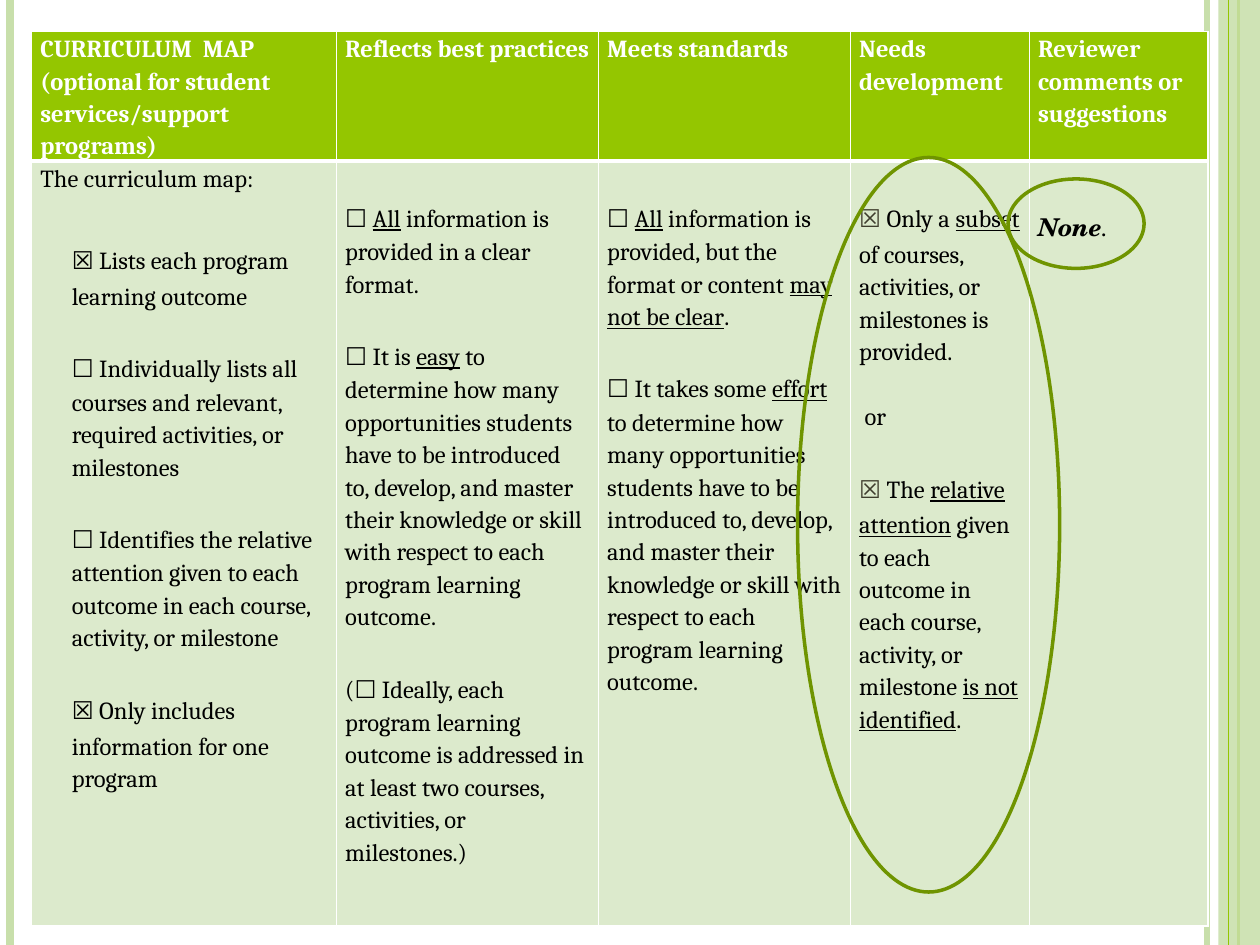
"""Builds a curriculum map review slide with a rubric table and two highlights."""
from dataclasses import dataclass

from lxml import etree
from pptx import Presentation
from pptx import util as u
from pptx.dml.color import RGBColor
from pptx.enum import shapes
from pptx.oxml import ns

COLORS = {
    "white": "FFFFFF", "black": "000000", "green": "94C600", "olive": "6F9400",
    "pale": "DCEACC", "rail": "C8DFAB", "check": "3E3D2D",
}
BODY, OPEN_BOX, CHECKED_BOX = "Cambria", "Noto Sans CJK JP", "TeX Gyre Schola"
LINE_GAP = 18.5

COLUMNS = [2.42, 2.08, 2, 1.42, 1.42]
ROWS = [1.01, 6.07]
HEADERS = [
    "CURRICULUM  MAP (optional for student services/support programs)",
    "Reflects best practices",
    "Meets standards",
    "Needs development",
    "Reviewer comments or suggestions",
]
OPPORTUNITIES = (
    " to determine how many opportunities students have to be introduced to, "
    "develop, and master their knowledge or skill with respect to each program "
    "learning outcome."
)
CHECKLIST = [
    "The curriculum map:",
    "☒ Lists each program learning outcome",
    "☐ Individually lists all courses and relevant, required activities, or milestones",
    "☐ Identifies the relative attention given to each outcome in each course, "
    "activity, or milestone",
    "☒ Only includes information for one program",
]
RATINGS = [
    [
        "☐ _All_ information is provided in a clear format.",
        "☐ It is _easy_" + OPPORTUNITIES,
        "(☐ Ideally, each program learning outcome is addressed in at least two "
        "courses, activities, or milestones.)",
    ],
    [
        "☐ _All_ information is provided, but the format or content _may not be clear_.",
        "☐ It takes some _effort_" + OPPORTUNITIES,
    ],
    [
        "☒ Only a _subset_ of courses, activities, or milestones is provided.",
        " or",
        "☒ The _relative attention_ given to each outcome in each course, activity, "
        "or milestone _is not identified_.",
    ],
]
RAILS = [(9.58, "rail", 3), (0.08, "rail", 4.5), (9.83, "green", 1.5)]
HIGHLIGHTS = [(6.33, 1.25, 2.08, 5.83), (8, 1.42, 1.08, 0.71)]


def rgb(name):
    return RGBColor.from_string(COLORS[name])


@dataclass
class Painter:
    """Holds the slide and the text style."""
    slide: object
    size: float = 14
    spacing: float = 1.15

    def rail(self, left, color, width):
        line = self.slide.shapes.add_connector(
            shapes.MSO_CONNECTOR.STRAIGHT, u.Inches(left), 0, u.Inches(left), u.Inches(7.5))
        line.line.color.rgb = rgb(color)
        line.line.width = u.Pt(width)
        etree.SubElement(line._element.spPr, ns.qn("a:effectLst"))

    def band(self, left, width):
        band = self.slide.shapes.add_shape(
            shapes.MSO_SHAPE.RECTANGLE, u.Inches(left), 0, u.Inches(width), u.Inches(7.5))
        band.shadow.inherit = False
        band.fill.solid()
        band.fill.fore_color.rgb = rgb("rail")
        tint = band._element.spPr.find(".//" + ns.qn("a:srgbClr"))
        etree.SubElement(tint, ns.qn("a:alpha"), val="87000")
        band.line.fill.background()

    def highlight(self, *frame):
        ring = self.slide.shapes.add_shape(
            shapes.MSO_SHAPE.OVAL, *(u.Inches(length) for length in frame))
        ring.shadow.inherit = False
        ring.fill.background()
        ring.line.color.rgb = rgb("olive")
        ring.line.width = u.Pt(2)

    def table(self, left, top):
        table = self.slide.shapes.add_table(
            len(ROWS), len(COLUMNS), u.Inches(left), u.Inches(top),
            u.Inches(sum(COLUMNS)), u.Inches(sum(ROWS))).table
        for column, width in zip(table.columns, COLUMNS):
            column.width = u.Inches(width)
        for row, height in zip(table.rows, ROWS):
            row.height = u.Inches(height)
        return table

    def cell(self, cell, fill, top=0, edges=(1, 1, 1, 1)):
        cell.margin_left = cell.margin_right = u.Inches(0.07)
        cell.margin_top, cell.margin_bottom = u.Inches(top), 0
        properties = cell._tc.get_or_add_tcPr()
        for side, width in zip("LRTB", edges):
            edge = etree.SubElement(properties, ns.qn("a:ln" + side), w=str(u.Pt(width)))
            paint = etree.SubElement(edge, ns.qn("a:solidFill"))
            etree.SubElement(paint, ns.qn("a:srgbClr"), val=COLORS["white"])
        cell.fill.solid()
        cell.fill.fore_color.rgb = rgb(fill)

    def span(self, para, words, font=BODY, color="black", bold=False, underline=False):
        span = para.add_run()
        span.text = words
        span.font.name, span.font.size = font, u.Pt(self.size)
        span.font.bold, span.font.underline = bold, underline
        span.font.color.rgb = rgb(color)
        etree.SubElement(span.font._element, ns.qn("a:ea"), typeface=font)
        return span

    def para(self, cell, words, index=0, gap=0, indent=0, color="black",
             check="black", bold=False):
        frame = cell.text_frame
        para = frame.add_paragraph() if index else frame.paragraphs[0]
        para.line_spacing = self.spacing
        para.space_before = u.Pt(gap)
        if indent:
            para._p.get_or_add_pPr().set("marL", str(u.Inches(indent)))
        for number, part in enumerate(words.split("_")):
            for piece in part.replace("☐", "|☐|").replace("☒", "|☒|").split("|"):
                if piece == "☐":
                    self.span(para, piece, OPEN_BOX)
                elif piece == "☒":
                    self.span(para, piece, CHECKED_BOX, check, True)
                elif piece:
                    self.span(para, piece, BODY, color, bold, number % 2 == 1)


def main():
    deck = Presentation()
    deck.slide_width, deck.slide_height = u.Inches(10), u.Inches(7.5)
    painter = Painter(deck.slides.add_slide(deck.slide_layouts[6]))

    for rail in RAILS:
        painter.rail(*rail)
    painter.band(9.67, 0.33)
    painter.rail(9.75, "green", 0.75)

    table = painter.table(0.25, 0.25)
    for column, words in enumerate(HEADERS):
        cell = table.cell(0, column)
        painter.cell(cell, "green", edges=(1, 1, 1, 3))
        painter.para(cell, words, color="white", bold=True)

    checklist = table.cell(1, 0)
    painter.cell(checklist, "pale", edges=(1, 1, 3, 1))
    for index, words in enumerate(CHECKLIST):
        gap = (0, 24)[index] if index < 2 else LINE_GAP
        painter.para(checklist, words, index, gap, 0.25 if index else 0)

    for column, rating in enumerate(RATINGS, 1):
        cell = table.cell(1, column)
        painter.cell(cell, "pale", LINE_GAP / 72, (1, 1, 3, 1))
        for index, words in enumerate(rating):
            painter.para(cell, words, index, LINE_GAP if index else 0, check="check")

    comment = table.cell(1, 4)
    painter.cell(comment, "pale", 0.37, (1, 1, 3, 1))
    verdict = comment.text_frame.paragraphs[0]
    painter.span(verdict, "None", CHECKED_BOX, bold=True).font.italic = True
    painter.span(verdict, ".", CHECKED_BOX).font.italic = True

    for frame in HIGHLIGHTS:
        painter.highlight(*frame)
    deck.save("out.pptx")


if __name__ == "__main__":
    main()
